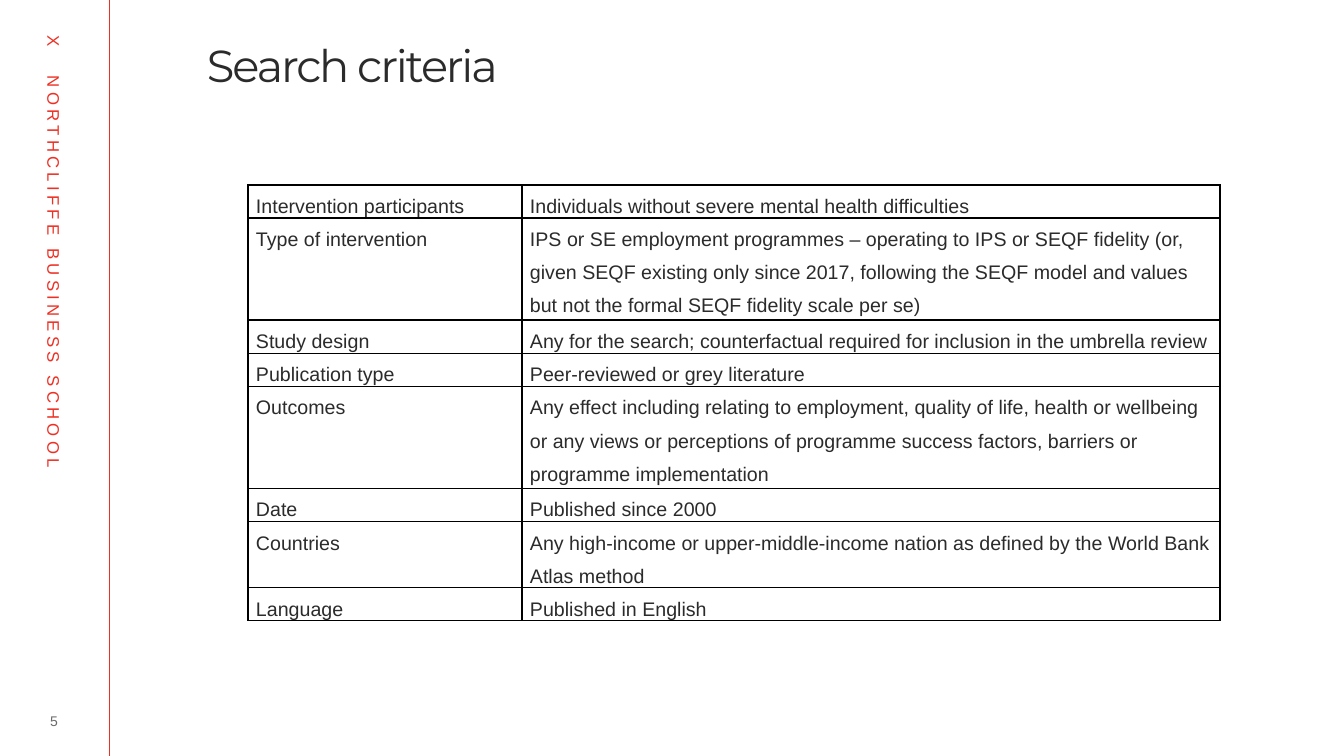
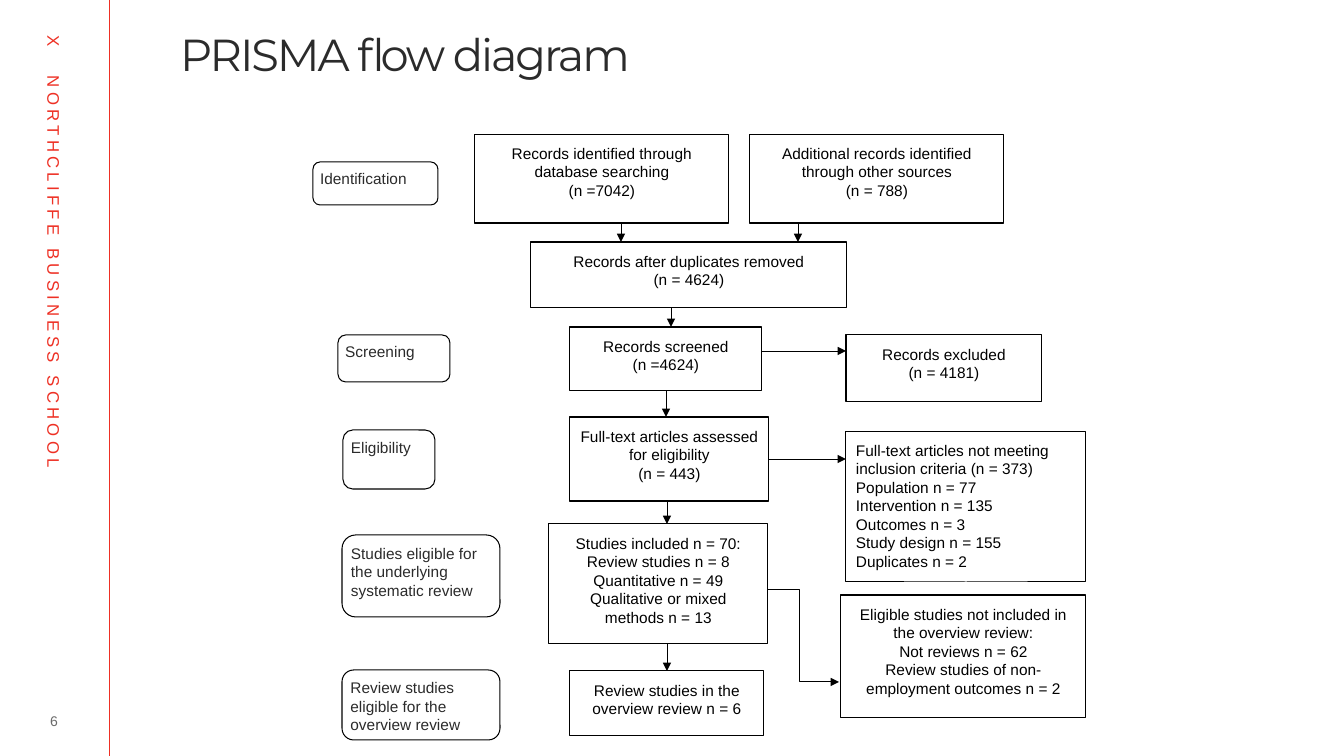
from lxml.etree import SubElement
from pptx import Presentation
from pptx.dml.color import RGBColor
from pptx.enum.shapes import MSO_CONNECTOR as CONN, MSO_SHAPE as SHAPE
from pptx.enum.text import MSO_ANCHOR as ANCHOR, MSO_AUTO_SIZE as AUTOSIZE, PP_ALIGN as ALIGN
from pptx.oxml.ns import qn
from pptx.util import Emu, Pt

C = {"red": "EE3024", "ink": "2B2B2B", "gray": "6B6B6B", "black": "000000", "white": "FFFFFF"}
SLIDE_W, SLIDE_H = 1344, 756
RAIL_X = 109
BRAND = "X\tNORTHCLIFFE BUSINESS SCHOOL"

CRITERIA = [
    ("Intervention participants", "Individuals without severe mental health difficulties", 1),
    ("Type of intervention", "IPS or SE employment programmes – operating to IPS or SEQF fidelity (or, "
     "given SEQF existing only since 2017, following the SEQF model and values "
     "but not the formal SEQF fidelity scale per se)", 3),
    ("Study design", "Any for the search; counterfactual required for inclusion in the umbrella review", 1),
    ("Publication type", "Peer-reviewed or grey literature", 1),
    ("Outcomes", "Any effect including relating to employment, quality of life, health or wellbeing "
     "or any views or perceptions of programme success factors, barriers or "
     "programme implementation", 3),
    ("Date", "Published since 2000", 1),
    ("Countries", "Any high-income or upper-middle-income nation as defined by the World Bank "
     "Atlas method", 2),
    ("Language", "Published in English", 1),
]
ROW_H = {1: 33, 2: 66, 3: 102}
COL_W = (274, 698)

STAGES = [
    ("Identification", (313, 162, 125, 43)),
    ("Screening", (338, 335, 112, 47)),
    ("Eligibility", (343, 430, 92, 59)),
    ("Studies eligible for the underlying systematic review", (342, 535, 158, 82)),
    ("Review studies eligible for the overview review", (342, 670, 158, 70)),
]
BOXES = {
    "searched": ("Records identified through database searching\n(n =7042)", (475, 134, 254, 89)),
    "other": ("Additional records identified through other sources\n(n = 788)", (750, 134, 254, 89)),
    "deduplicated": ("Records after duplicates removed\n(n = 4624)", (531, 242, 316, 66)),
    "screened": ("Records screened\n(n =4624)", (570, 327, 192, 64)),
    "excluded": ("Records excluded\n(n = 4181)", (846, 335, 196, 67)),
    "assessed": ("Full-text articles assessed for eligibility\n(n = 443)", (570, 417, 199, 84)),
    "rejected": ("Full-text articles not meeting inclusion criteria (n = 373)\nPopulation n = 77\n"
                 "Intervention n = 135\nOutcomes n = 3\nStudy design n = 155\nDuplicates n = 2",
                 (846, 431, 240, 151)),
    "included": ("Studies included n = 70:\nReview studies n = 8\nQuantitative n = 49\n"
                 "Qualitative or mixed methods n = 13", (549, 524, 219, 120)),
    "left_out": ("Eligible studies not included in the overview review:\nNot reviews n = 62\n"
                 "Review studies of non-employment outcomes n = 2", (841, 595, 245, 123)),
    "reviewed": ("Review studies in the overview review n = 6", (570, 671, 194, 65)),
}
ELBOW = (760, 590, 839, 682)
ARROWS = [
    ((621, 223, 621, 242), None, None),
    ((798, 223, 798, 242), None, None),
    ((671, 308, 671, 327), None, None),
    ((666, 391, 666, 417), ("screened", 2), None),
    ((762, 351, 846, 351), None, None),
    ((769, 459, 846, 459), ("assessed", 3), None),
    ((667, 501, 667, 524), None, None),
    ((667, 644, 667, 671), None, ("reviewed", 0)),
]


def px(n):
    return Emu(round(n * 914400 / 100.8))


def rgb(name):
    return RGBColor.from_string(C[name])


def write(tf, text, size=11, color="black", font="Arial", align=ALIGN.LEFT, anchor=ANCHOR.TOP,
          inset=(0, 0, 0, 0), line=None, before=None, after=None, spacing=None):
    tf.word_wrap = True
    tf.auto_size = AUTOSIZE.NONE
    tf.vertical_anchor = anchor
    tf.margin_left, tf.margin_top, tf.margin_right, tf.margin_bottom = map(px, inset)
    for i, part in enumerate(text.split("\n")):
        p = tf.add_paragraph() if i else tf.paragraphs[0]
        p.alignment = align
        if line:
            p.line_spacing = line
        if before is not None:
            p.space_before = Pt(before)
        if after is not None:
            p.space_after = Pt(after)
        r = p.add_run()
        r.text = part
        r.font.size, r.font.name = Pt(size), font
        r.font.color.rgb = rgb(color)
        if spacing:
            r.font._element.set("spc", str(spacing))


def add_text(s, text, box, **fmt):
    sp = s.shapes.add_textbox(*map(px, box))
    write(sp.text_frame, text, **fmt)
    return sp


def add_box(s, text, box, kind=SHAPE.RECTANGLE, fill="white", **fmt):
    sp = s.shapes.add_shape(kind, *map(px, box))
    sp.shadow.inherit = False
    if fill:
        sp.fill.solid()
        sp.fill.fore_color.rgb = rgb(fill)
    else:
        sp.fill.background()
    sp.line.color.rgb = rgb("black")
    sp.line.width = Pt(0.75)
    write(sp.text_frame, text, **fmt)
    return sp


def add_line(s, ends, color="black", width=0.5, kind=CONN.STRAIGHT, arrow=True):
    c = s.shapes.add_connector(kind, *map(px, ends))
    c.line.color.rgb = rgb(color)
    c.line.width = Pt(width)
    if arrow:
        SubElement(c.line._get_or_add_ln(), qn("a:tailEnd"), type="triangle")
    SubElement(c._element.spPr, qn("a:effectLst"))
    return c


def add_slide(prs, title, box, number):
    s = prs.slides.add_slide(prs.slide_layouts[5])
    add_line(s, (RAIL_X, 0, RAIL_X, SLIDE_H), "red", arrow=False)
    sp = add_text(s, BRAND, (-232, 296, 572, 30), size=12, color="red", spacing=300,
                  inset=(10, 5, 10, 5))
    sp.rotation = 90
    tabs = SubElement(sp.text_frame.paragraphs[0]._p.get_or_add_pPr(), qn("a:tabLst"))
    SubElement(tabs, qn("a:tab"), pos=str(px(41)), algn="l")
    add_text(s, number, (26, 708, 56, 25), size=10, color="gray",
             align=ALIGN.CENTER, anchor=ANCHOR.MIDDLE)
    t = s.shapes.title
    t.left, t.top, t.width, t.height = map(px, box)
    write(t.text_frame, title, size=32, color="ink", font="Montserrat", line=0.8,
          inset=(0, 21, 0, 0), spacing=-150)
    return s


def add_borders(cell):
    tcPr = cell._tc.get_or_add_tcPr()
    for i, side in enumerate(("lnL", "lnR", "lnT", "lnB")):
        ln = tcPr.makeelement(qn("a:" + side), {"w": str(Pt(1))})
        SubElement(SubElement(ln, qn("a:solidFill")), qn("a:srgbClr"), val=C["black"])
        tcPr.insert(i, ln)


def add_criteria(s):
    heights = [ROW_H[lines] for _, _, lines in CRITERIA]
    box = (248, 185, sum(COL_W), sum(heights))
    table = s.shapes.add_table(len(CRITERIA), len(COL_W), *map(px, box)).table
    table.first_row = table.horz_banding = False
    for col, w in zip(table.columns, COL_W):
        col.width = px(w)
    for row, h, (*texts, _) in zip(table.rows, heights, CRITERIA):
        row.height = px(h)
        for cell, text in zip(row.cells, texts):
            cell.fill.background()
            add_borders(cell)
            cell.margin_left = cell.margin_right = px(8)
            cell.margin_top = cell.margin_bottom = 0
            p = cell.text_frame.paragraphs[0]
            p.line_spacing, p.space_after = 1.5, Pt(8)
            r = p.add_run()
            r.text = text
            r.font.size, r.font.name = Pt(14), "Arial"
            r.font.color.rgb = rgb("ink")


def add_flow(s):
    add_line(s, ELBOW, width=0.75, kind=CONN.ELBOW)
    for text, box in STAGES:
        add_box(s, text, box, SHAPE.ROUNDED_RECTANGLE, None, color="ink", before=2,
                inset=(5, 5, 5, 5))
    boxes = {}
    for name, (text, box) in BOXES.items():
        align = ALIGN.LEFT if name == "rejected" else ALIGN.CENTER
        boxes[name] = add_box(s, text, box, align=align, inset=(10, 10, 10, 10))
    for ends, begin, end in ARROWS:
        c = add_line(s, ends)
        if begin:
            c.begin_connect(boxes[begin[0]], begin[1])
        if end:
            c.end_connect(boxes[end[0]], end[1])


def main():
    prs = Presentation()
    prs.slide_width, prs.slide_height = px(SLIDE_W), px(SLIDE_H)
    add_criteria(add_slide(prs, "Search criteria", (207, 27, 1076, 56), "5"))
    add_flow(add_slide(prs, "PRISMA flow diagram", (180, 16, 1076, 82), "6"))
    prs.save("out.pptx")


if __name__ == "__main__":
    main()
